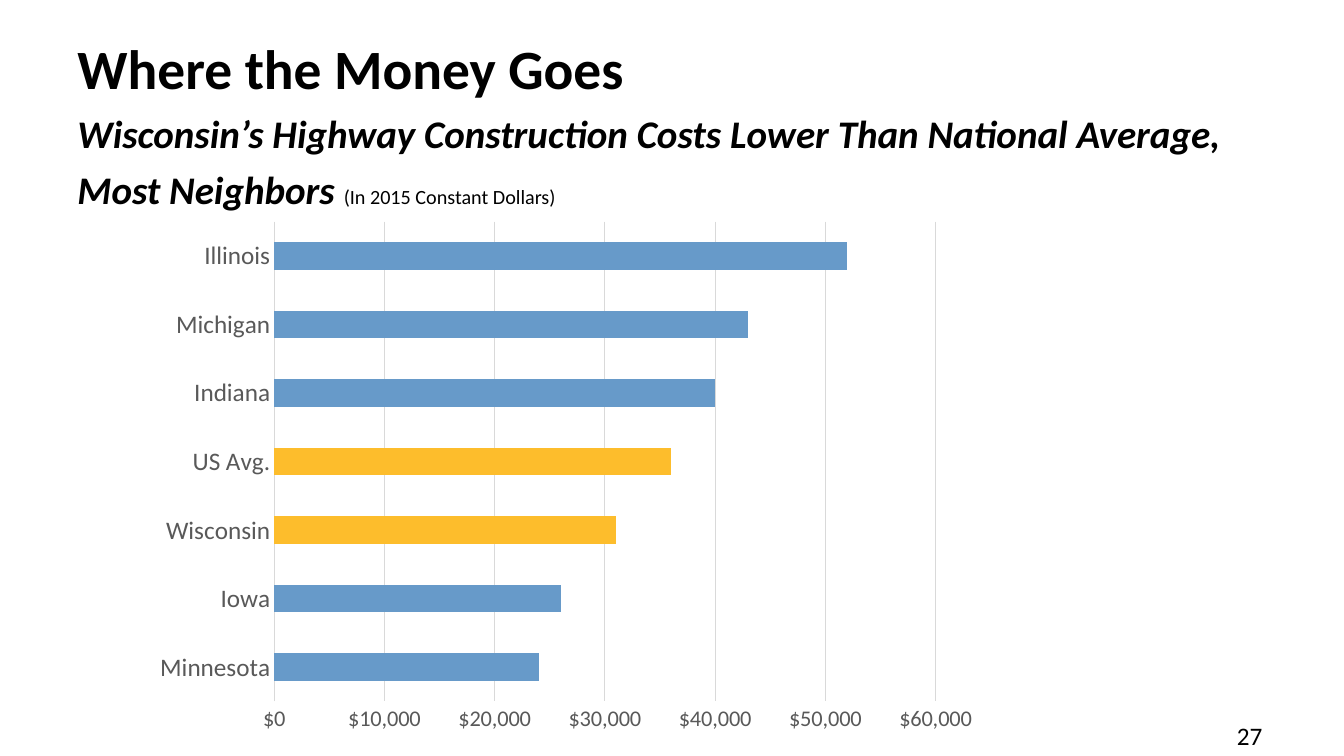
import pptx
import pptx.util
import pptx.chart.data
import pptx.dml.color
import pptx.enum.chart
import pptx.enum.text
import pptx.oxml

WIDTH, HEIGHT = 13.33, 7.5
FONT = "Calibri"
BLACK, GREY, GRID, BLUE, GOLD = "000000", "595959", "D9D9D9", "679AC9", "FDBD2C"

HEADING = [
    ("Where the Money Goes\v", {"size": 39.6, "bold": True}),
    ("Wisconsin’s Highway Construction Costs Lower Than National Average, Most Neighbors ",
     {"size": 27.9, "bold": True, "italic": True}),
    ("(In 2015 Constant Dollars)", {"size": 14.4}),
]
PAGE_NUMBER = [("27", {"size": 18})]
COSTS = {
    "Minnesota": 24000,
    "Iowa": 26000,
    "Wisconsin": 31000,
    "US Avg.": 36000,
    "Indiana": 40000,
    "Michigan": 43000,
    "Illinois": 52000,
}
HIGHLIGHTED = ("Wisconsin", "US Avg.")
CHART_BOX = (1.42, 2.09, 8.38, 5.28)
PLOT_BOX = (2.72, 2.2, 6.56, 4.76)


def rgb(value):
    return pptx.dml.color.RGBColor.from_string(value)


def place(*lengths):
    return [pptx.util.Inches(length) for length in lengths]


def style(font, size=18, color=BLACK, bold=False, italic=False):
    font.name = FONT
    font.size = pptx.util.Pt(size)
    font.color.rgb = rgb(color)
    font.bold = bold
    font.italic = italic


def add_text(slide, pieces, box, spacing=None):
    frame = slide.shapes.add_textbox(*place(*box)).text_frame
    frame.word_wrap = True
    frame.vertical_anchor = pptx.enum.text.MSO_ANCHOR.TOP
    paragraph = frame.paragraphs[0]
    if spacing:
        paragraph.line_spacing = pptx.util.Pt(spacing)
    for words, look in pieces:
        run = paragraph.add_run()
        run.text = words.rstrip("\v")
        style(run.font, **look)
        if words.endswith("\v"):
            paragraph.add_line_break()


def paint_line(line):
    line.color.rgb = rgb(GRID)
    line.width = pptx.util.Pt(0.75)


def fix_plot_area(chart):
    namespace = "http://schemas.openxmlformats.org/drawingml/2006/chart"
    left, top, width, height = CHART_BOX
    plot_left, plot_top, plot_width, plot_height = PLOT_BOX
    shares = {
        "x": (plot_left - left) / width,
        "y": (plot_top - top) / height,
        "w": plot_width / width,
        "h": plot_height / height,
    }
    sides = "".join(f'<c:{side} val="{share:.4f}"/>' for side, share in shares.items())
    layout = pptx.oxml.parse_xml(
        f'<c:layout xmlns:c="{namespace}"><c:manualLayout>'
        '<c:layoutTarget val="inner"/><c:xMode val="edge"/><c:yMode val="edge"/>'
        f'{sides}</c:manualLayout></c:layout>')
    plot_area = chart._chartSpace.chart.plotArea
    for automatic in plot_area.findall(f"{{{namespace}}}layout"):
        plot_area.remove(automatic)
    plot_area.insert(0, layout)


def add_cost_chart(slide):
    costs = pptx.chart.data.CategoryChartData()
    costs.categories = list(COSTS)
    costs.add_series("Series 1", list(COSTS.values()))
    chart = slide.shapes.add_chart(
        pptx.enum.chart.XL_CHART_TYPE.BAR_STACKED, *place(*CHART_BOX), costs).chart
    chart.has_legend = False
    chart.has_title = False
    style(chart.font, size=10)
    fix_plot_area(chart)

    bars = chart.plots[0]
    bars.gap_width = 150
    bars.overlap = 100
    bars.vary_by_categories = False
    series = bars.series[0]
    series.format.fill.solid()
    series.format.fill.fore_color.rgb = rgb(BLUE)
    for index, region in enumerate(COSTS):
        if region in HIGHLIGHTED:
            fill = series.points[index].format.fill
            fill.solid()
            fill.fore_color.rgb = rgb(GOLD)

    states, dollars = chart.category_axis, chart.value_axis
    for axis, size in ((states, 18), (dollars, 16)):
        axis.major_tick_mark = pptx.enum.chart.XL_TICK_MARK.NONE
        axis.minor_tick_mark = pptx.enum.chart.XL_TICK_MARK.NONE
        style(axis.tick_labels.font, size=size, color=GREY)
    states.has_major_gridlines = False
    paint_line(states.format.line)
    dollars.minimum_scale, dollars.maximum_scale, dollars.major_unit = 0, 60000, 10000
    dollars.has_major_gridlines = True
    paint_line(dollars.major_gridlines.format.line)
    dollars.format.line.fill.background()
    dollars.tick_labels.number_format = '"$"#,##0'
    dollars.tick_labels.number_format_is_linked = False


def main():
    deck = pptx.Presentation()
    deck.slide_width, deck.slide_height = place(WIDTH, HEIGHT)
    slide = deck.slides.add_slide(deck.slide_layouts[6])
    add_text(slide, PAGE_NUMBER, (12.17, 7.1, 1, 1.01))
    add_text(slide, HEADING, (0.67, 0.39, 12.04, 1.25), spacing=40)
    add_cost_chart(slide)
    deck.save("out.pptx")


if __name__ == "__main__":
    main()
